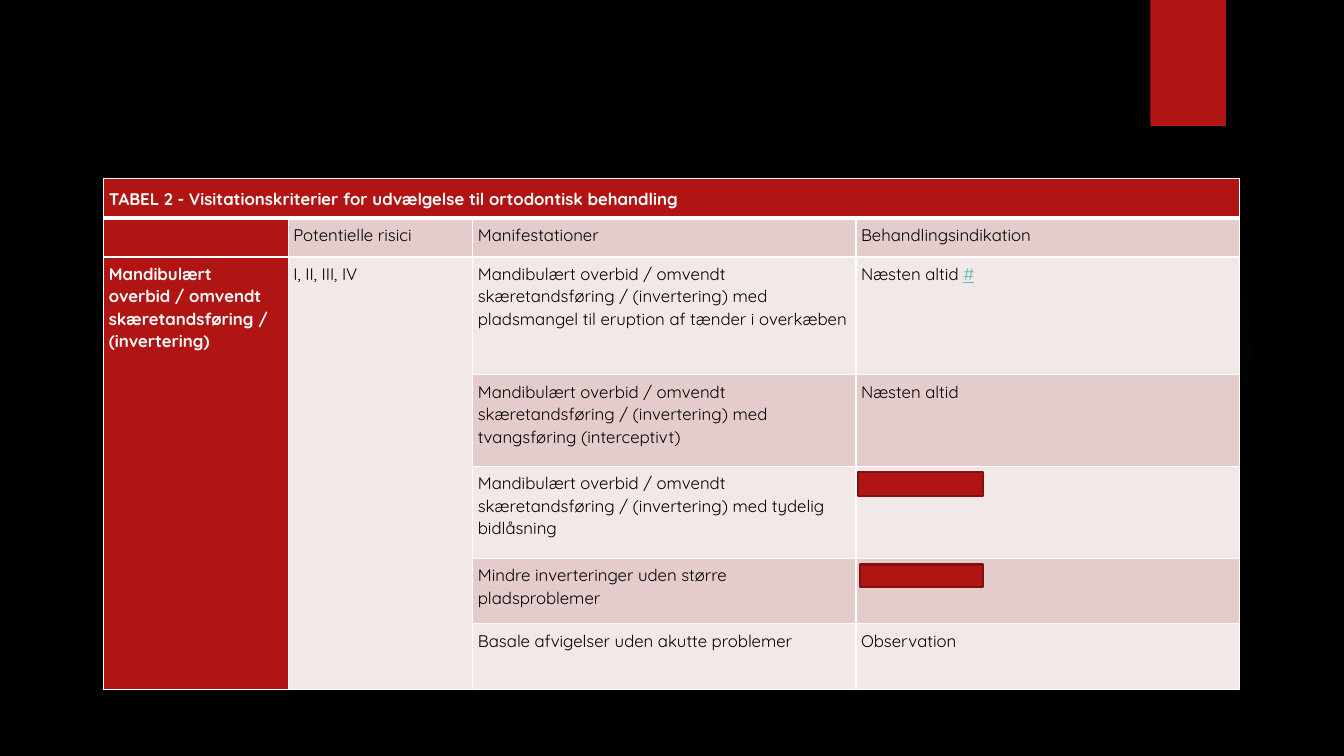
from lxml import etree
from pptx import Presentation
from pptx.dml.color import RGBColor
from pptx.enum.shapes import MSO_SHAPE
from pptx.enum.text import MSO_ANCHOR
from pptx.oxml import parse_xml
from pptx.oxml.ns import nsdecls, qn
from pptx.util import Inches, Pt

RECTANGLE = MSO_SHAPE.RECTANGLE
OVAL = MSO_SHAPE.OVAL
MIDDLE = MSO_ANCHOR.MIDDLE

RED, DARK_RED, WHITE, BLACK = "B01513", "82100E", "FFFFFF", "000000"
DARK_BAND, LIGHT_BAND, LINK = "E4CCCC", "F2E8E7", "58C1BA"
INSET = Inches(0.05)


def color(hex_value):
    return RGBColor.from_string(hex_value)


def add_plain_shape(kind, left, top, width, height):
    """Add a shape without shadow; fill and line are left to the caller."""
    shape = slide.shapes.add_shape(
        kind, Inches(left), Inches(top), Inches(width), Inches(height))
    shape.shadow.inherit = False
    return shape


presentation = Presentation()
presentation.slide_width = Inches(13.33)
presentation.slide_height = Inches(7.5)
slide = presentation.slides.add_slide(presentation.slide_layouts[6])
slide.background.fill.solid()
slide.background.fill.fore_color.rgb = color(BLACK)

# Faint glow and red tab
glow = add_plain_shape(OVAL, 9.41, 1.83, 3.08, 3.08)
stops = "".join(
    f'<a:gs pos="{position * 1000}"><a:srgbClr val="50B9C1">'
    f'<a:alpha val="{alpha * 1000}"/></a:srgbClr></a:gs>'
    for position, alpha in [(0, 7), (36, 6), (69, 0)])
gradient = parse_xml(
    f'<a:gradFill {nsdecls("a")}><a:gsLst>{stops}</a:gsLst><a:path path="circle">'
    '<a:fillToRect l="50000" t="50000" r="50000" b="50000"/></a:path></a:gradFill>')
glow._element.spPr.find(qn("a:prstGeom")).addnext(gradient)
glow.line.fill.background()

tab = add_plain_shape(RECTANGLE, 11.41, 0, 0.75, 1.25)
tab.fill.solid()
tab.fill.fore_color.rgb = color(RED)
tab.line.fill.background()

# Table of criteria
overbite = "Mandibulært overbid / omvendt skæretandsføring / (invertering)"
rows = [
    ["TABEL 2 - Visitationskriterier for udvælgelse til ortodontisk behandling", "", "", ""],
    ["", "Potentielle risici", "Manifestationer", "Behandlingsindikation"],
    [overbite, "I, II, III, IV",
     overbite + " med pladsmangel til eruption af tænder i overkæben", "Næsten altid "],
    ["", "", overbite + " med tvangsføring (interceptivt)", "Næsten altid"],
    ["", "", overbite + " med tydelig bidlåsning", ""],
    ["", "", "Mindre inverteringer uden større pladsproblemer", ""],
    ["", "", "Basale afvigelser uden akutte problemer", "Observation"],
]
column_widths = [1.83, 1.83, 3.8, 3.8]
row_heights = [0.39, 0.39, 1.17, 0.91, 0.91, 0.65, 0.65]

table = slide.shapes.add_table(
    len(rows), len(column_widths), Inches(1.03), Inches(1.77),
    Inches(sum(column_widths)), Inches(sum(row_heights))).table
for column, width in zip(table.columns, column_widths):
    column.width = Inches(width)
for row, height in zip(table.rows, row_heights):
    row.height = Inches(height)

for row_index, texts in enumerate(rows):
    for column_index, text in enumerate(texts):
        cell = table.cell(row_index, column_index)
        is_heading = row_index == 0 or column_index == 0
        cell.margin_left = cell.margin_top = cell.margin_bottom = INSET
        cell.margin_right = Inches(0.04)
        if row_index == 0:
            cell.vertical_anchor = MIDDLE

        for side in "LRTB":
            is_thick = (row_index, side) in [(0, "B"), (1, "T")]
            border = etree.SubElement(
                cell._tc.get_or_add_tcPr(), qn(f"a:ln{side}"), w=str(Pt(3 if is_thick else 1)))
            border_fill = etree.SubElement(border, qn("a:solidFill"))
            etree.SubElement(border_fill, qn("a:srgbClr"), val=WHITE)

        band = DARK_BAND if row_index % 2 else LIGHT_BAND
        cell.fill.solid()
        cell.fill.fore_color.rgb = color(RED if is_heading else band)

        paragraph = cell.text_frame.paragraphs[0]
        paragraph.line_spacing = 1.07
        if not text:
            etree.SubElement(paragraph._p, qn("a:endParaRPr"), sz="1200")
            continue
        paragraph.text = text
        if (row_index, column_index) == (2, 3):
            link = paragraph.add_run()
            link.text = "#"
        for run in paragraph.runs:
            run.font.name = "Quicksand"
            run.font.size = Pt(12)
            run.font.bold = is_heading
            run.font.color.rgb = color(WHITE if is_heading else BLACK)

link.font.underline = True
link.font.color.rgb = color(LINK)

table.cell(0, 0).merge(table.cell(0, 3))
for column_index in (0, 1):
    table.cell(2, column_index).merge(table.cell(6, column_index))

# Red bars in the treatment column
for position in [(8.51, 4.68, 1.24, 0.24), (8.53, 5.6, 1.22, 0.22)]:
    bar = add_plain_shape(RECTANGLE, *position)
    bar.fill.solid()
    bar.fill.fore_color.rgb = color(RED)
    bar.line.color.rgb = color(DARK_RED)
    bar.line.width = Pt(1.5)

presentation.save("out.pptx")
